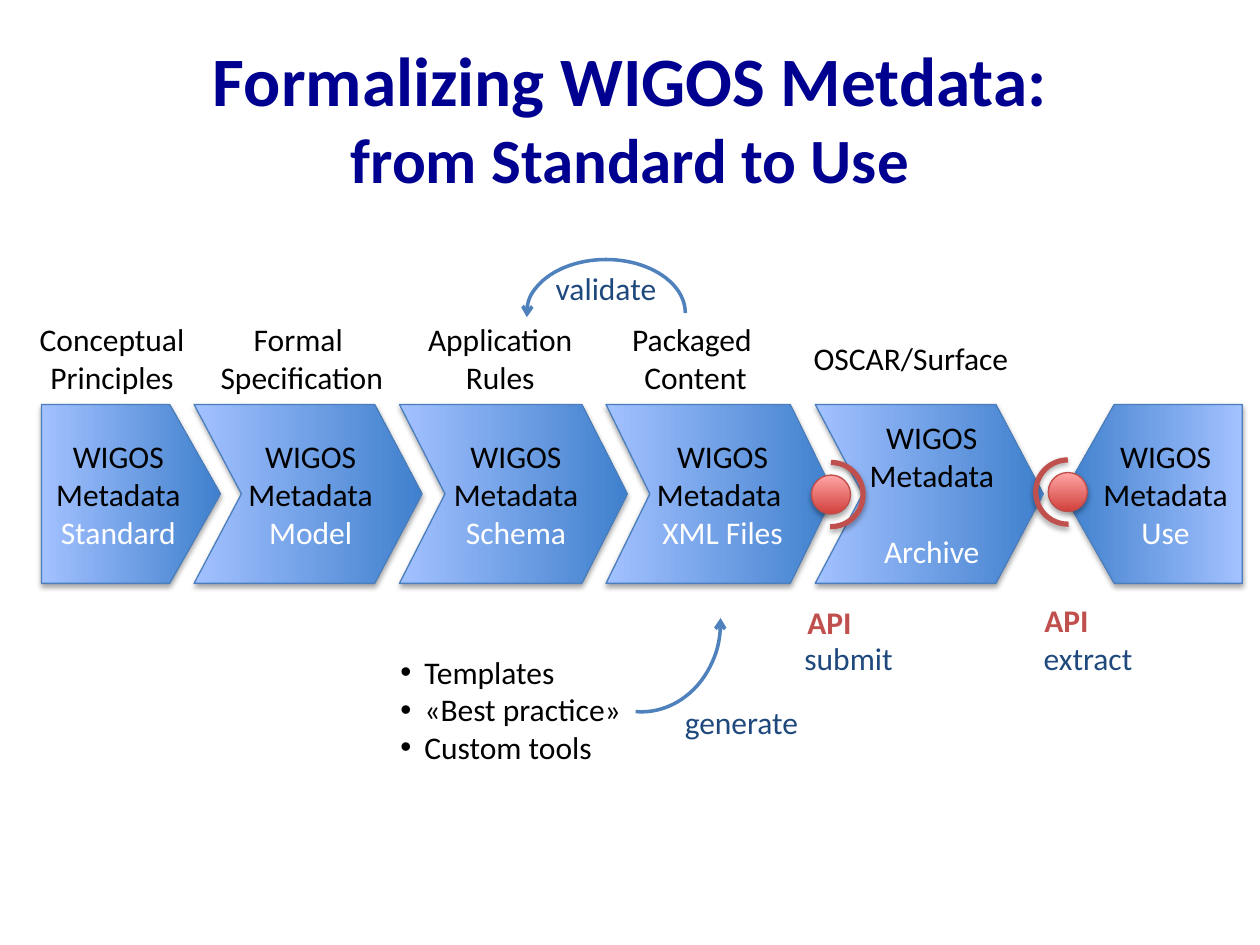
from lxml.etree import SubElement
from pptx import Presentation
from pptx.dml.color import RGBColor
from pptx.enum.shapes import MSO_SHAPE as Shape
from pptx.enum.text import MSO_ANCHOR as Anchor, MSO_AUTO_SIZE as AutoSize, PP_ALIGN as Align
from pptx.oxml.ns import qn
from pptx.util import Inches, Pt

COLORS = {
    "title": "000090", "text": "000000", "white": "FFFFFF", "action": "1F497D",
    "arrow": "4F81BD", "step_edge": "4B7EBC", "step_light": "A3C1FF", "step_dark": "3F80CD",
    "api": "C0504D", "api_edge": "BF4C48", "api_dark": "D1403C", "api_light": "FFA6A5",
}


def rgb(name):
    return RGBColor.from_string(COLORS[name])


def set_values(target, values):
    for name, value in values.items():
        setattr(target, name, value)


class FlowSlide:
    font_name = "Calibri"

    def __init__(self, slide):
        self.slide = slide

    def add_runs(self, paragraph, runs, size=18, bold=False, align=Align.CENTER):
        paragraph.alignment = align
        for text, color in runs:
            for index, line in enumerate(text.split("\n")):
                if index:
                    paragraph.add_line_break()
                if line:
                    run = paragraph.add_run()
                    run.text = line
                    set_values(run.font, {"name": self.font_name, "size": Pt(size), "bold": bold})
                    run.font.color.rgb = rgb(color)

    def label(self, box, text, color="text", **style):
        frame = self.slide.shapes.add_textbox(*map(Inches, box)).text_frame
        set_values(frame, {"word_wrap": False, "auto_size": AutoSize.SHAPE_TO_FIT_TEXT})
        self.add_runs(frame.paragraphs[0], [(text, color)], **style)

    def title(self, box, lines):
        frame = self.slide.shapes.add_textbox(*map(Inches, box)).text_frame
        set_values(frame, {"word_wrap": True, "vertical_anchor": Anchor.MIDDLE})
        for index, (text, size) in enumerate(lines):
            if index:
                frame.paragraphs[0].add_line_break()
            self.add_runs(frame.paragraphs[0], [(text, "title")], size=size, bold=True)

    def bullets(self, box, items):
        frame = self.slide.shapes.add_textbox(*map(Inches, box)).text_frame
        set_values(frame, {"word_wrap": False, "auto_size": AutoSize.SHAPE_TO_FIT_TEXT})
        for index, item in enumerate(items):
            paragraph = frame.add_paragraph() if index else frame.paragraphs[0]
            properties = paragraph._p.get_or_add_pPr()
            properties.set("marL", str(Inches(0.19)))
            properties.set("indent", str(Inches(-0.19)))
            SubElement(properties, qn("a:buFont"), typeface="Arial")
            SubElement(properties, qn("a:buChar"), char="•")
            self.add_runs(paragraph, [(item, "text")], align=Align.LEFT)

    def outline(self, kind, box, edge, width, adjustments=(), flip=False, shadow=True):
        shape = self.slide.shapes.add_shape(kind, *map(Inches, box))
        for index, value in enumerate(adjustments):
            shape.adjustments[index] = value
        shape.fill.background()
        shape.line.color.rgb = rgb(edge)
        shape.line.width = Pt(width)
        shape.shadow.inherit = False
        if flip:
            shape._element.spPr.find(qn("a:xfrm")).set("flipH", "1")
        if shadow:
            effects = shape._element.spPr.find(qn("a:effectLst"))
            outer = SubElement(effects, qn("a:outerShdw"), blurRad=str(Pt(3.1)),
                               dist=str(Pt(1.8)), dir="5400000", rotWithShape="0")
            black = SubElement(outer, qn("a:srgbClr"), val=COLORS["text"])
            SubElement(black, qn("a:alpha"), val="35000")
        return shape

    def gradient(self, shape, start, end, angle):
        shape.fill.gradient()
        shape.fill.gradient_angle = angle
        for stop, color, position in zip(shape.fill.gradient_stops, (start, end), (0, 1)):
            stop.color.rgb = rgb(color)
            stop.position = position

    def step(self, kind, left, width, point, lead, name, flip=False):
        shape = self.outline(kind, (left, 3.21, width, 1.42), "step_edge", 0.75, [point], flip)
        self.gradient(shape, "step_light", "step_dark", 0)
        right = 0 if kind == Shape.CHEVRON else 0.04
        set_values(shape.text_frame, {
            "word_wrap": True, "vertical_anchor": Anchor.MIDDLE,
            "margin_left": Inches(0.04), "margin_right": Inches(right),
            "margin_top": Inches(0.05), "margin_bottom": Inches(0.05),
        })
        self.add_runs(shape.text_frame.paragraphs[0], [(lead, "text"), (name, "white")])

    def api(self, left, top, flip=False):
        ball = self.outline(Shape.OVAL, (left + 0.1, top + 0.1, 0.31, 0.31), "api_edge", 0.75, flip=flip)
        self.gradient(ball, "api_dark", "api_light", 90)
        self.outline(Shape.ARC, (left, top, 0.51, 0.51), "api", 3, (162, 54.955), flip)
        self.label((left - 0.03, top + 1.07, 0.56, 0.4), "API", "api", bold=True, align=Align.LEFT)

    def curved_arrow(self, box, angles, text=""):
        arc = self.outline(Shape.ARC, box, "arrow", 2, angles, shadow=False)
        SubElement(arc._element.spPr.find(qn("a:ln")), qn("a:headEnd"), type="arrow")
        if text:
            set_values(arc.text_frame, {"word_wrap": True, "vertical_anchor": Anchor.MIDDLE})
            self.add_runs(arc.text_frame.paragraphs[0], [(text, "action")])


def main():
    deck = Presentation()
    deck.slide_width, deck.slide_height = Inches(10), Inches(7.5)
    flow = FlowSlide(deck.slides.add_slide(deck.slide_layouts[6]))

    flow.title((0.5, 0.3, 9, 1.25), [("Formalizing WIGOS Metdata:", 39.6), ("from Standard to Use", 36)])

    lead = "WIGOS Metadata "
    flow.step(Shape.PENTAGON, 8.44, 1.42, 0.284, lead, "Use", flip=True)
    flow.step(Shape.PENTAGON, 0.33, 1.42, 0.284, lead, "Standard")
    for left, point, ending, name in (
        (1.54, 0.265, "", "Model"),
        (3.17, 0.255, "", "Schema"),
        (4.81, 0.245, "\n", "XML Files"),
        (6.47, 0.265, "\n", "Archive"),
    ):
        flow.step(Shape.CHEVRON, left, 1.81, point, lead + ending, name)

    flow.api(6.34, 3.67)
    flow.api(8.22, 3.65, flip=True)

    for left, top, width, height, heading in (
        (0.21, 2.49, 1.36, 0.71, "Conceptual\nPrinciples"),
        (1.64, 2.49, 1.51, 0.71, "Formal \nSpecification"),
        (3.29, 2.49, 1.36, 0.71, "Application\nRules"),
        (4.91, 2.49, 1.22, 0.71, "Packaged \nContent"),
        (6.35, 2.64, 1.76, 0.4, "OSCAR/Surface"),
    ):
        flow.label((left, top, width, height), heading)

    flow.curved_arrow((4.18, 2.06, 1.26, 0.85), (106.211, 0), "validate")
    flow.bullets((3.08, 5.13, 2.03, 1.01), ("Templates", "«Best practice»", "Custom tools"))
    flow.curved_arrow((4.46, 4.22, 1.26, 1.43), (214.375, 56.144))

    for left, top, width, action in (
        (5.33, 5.53, 1.11, "generate"), (6.28, 5.02, 0.91, "submit"), (8.18, 5.02, 0.91, "extract"),
    ):
        flow.label((left, top, width, 0.4), action, "action")

    deck.save("out.pptx")


if __name__ == "__main__":
    main()
